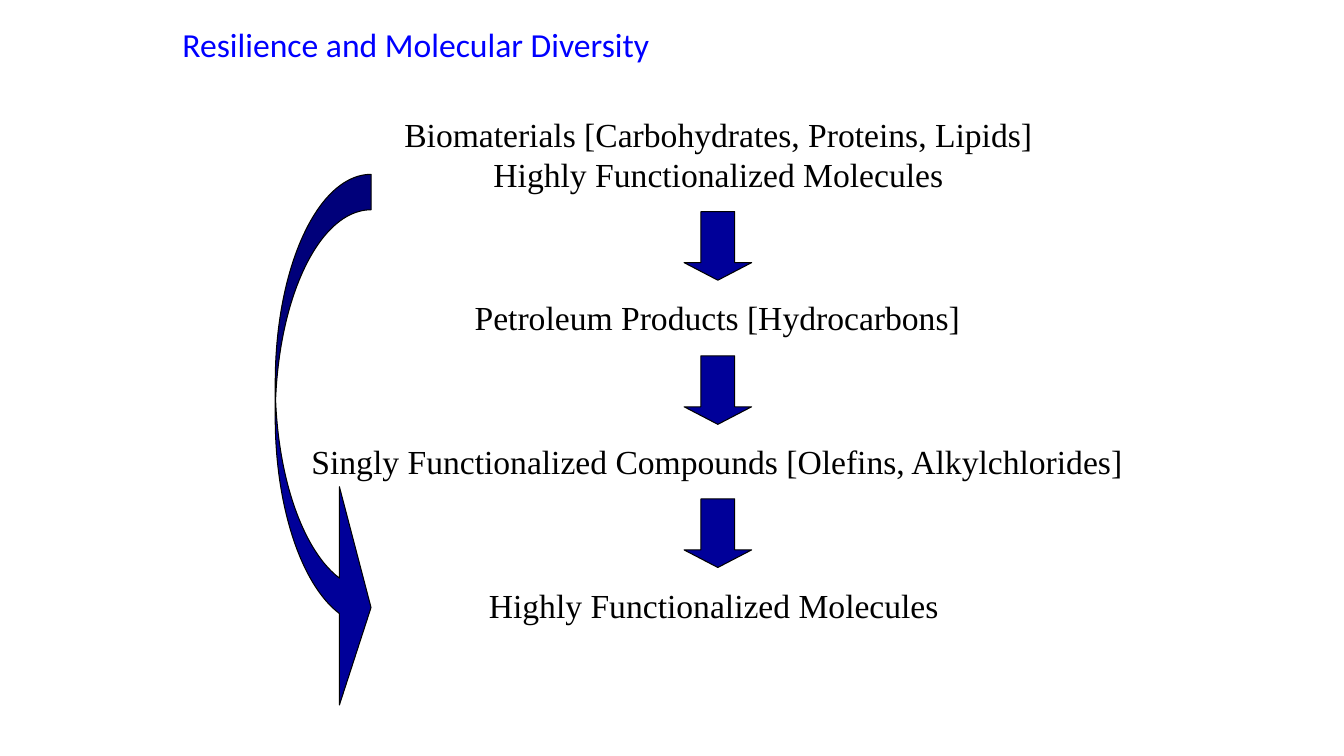
import pptx
import pptx.util
import pptx.dml.color
import pptx.enum.shapes
import pptx.enum.text

Inches, Pt = pptx.util.Inches, pptx.util.Pt
SHAPE = pptx.enum.shapes.MSO_SHAPE
ALIGN = pptx.enum.text.PP_ALIGN
ANCHOR = pptx.enum.text.MSO_ANCHOR

TITLE = "Resilience and Molecular Diversity"
# Lines, alignment, and box (left, top, width, height) of each stage
STAGES = [
    (["Biomaterials [Carbohydrates, Proteins, Lipids]",
      "Highly Functionalized Molecules"], ALIGN.CENTER, (3.88, 1.08, 6.49, 0.91)),
    (["Petroleum Products [Hydrocarbons]"], ALIGN.LEFT, (4.61, 2.9, 5.1, 0.5)),
    (["Singly Functionalized Compounds [Olefins, Alkylchlorides]"], ALIGN.LEFT,
     (2.99, 4.33, 8.35, 0.5)),
    (["Highly Functionalized Molecules"], ALIGN.LEFT, (4.75, 5.75, 4.74, 0.5)),
]
COLORS = {"title": "0000FF", "text": "000000", "arrow": "000099", "outline": "000000"}
CENTER = 7.12
ARROW_W, ARROW_H, ARROW_GAP = 0.67, 0.68, 0.12


def rgb(name):
    return pptx.dml.color.RGBColor.from_string(COLORS[name])


def add_run(p, text, font, color):
    r = p.add_run()
    r.text = text
    r.font.name = font
    r.font.size = Pt(24)
    r.font.color.rgb = rgb(color)


def add_arrow(s, kind, box, adjustments):
    sp = s.shapes.add_shape(kind, *map(Inches, box))
    sp.shadow.inherit = False
    for i, value in enumerate(adjustments):
        sp.adjustments[i] = value
    sp.fill.solid()
    sp.fill.fore_color.rgb = rgb("arrow")
    sp.line.color.rgb = rgb("outline")
    sp.line.width = Pt(0.75)


def add_stage(s, lines, alignment, box):
    sp = s.shapes.add_textbox(*map(Inches, box))
    tf = sp.text_frame
    tf.word_wrap = False
    for i, line in enumerate(lines):
        p = tf.add_paragraph() if i else tf.paragraphs[0]
        p.alignment = alignment
        add_run(p, line, "Times New Roman", "text")


def add_title(s):
    sp = s.shapes.title
    sp.left, sp.top, sp.width, sp.height = map(Inches, (1.71, 0.17, 10, 0.59))
    tf = sp.text_frame
    tf.word_wrap = True
    tf.vertical_anchor = ANCHOR.MIDDLE
    p = tf.paragraphs[0]
    p.alignment = ALIGN.LEFT
    p.line_spacing = 0.9
    add_run(p, TITLE, "Calibri", "title")


def main():
    prs = pptx.Presentation()
    prs.slide_width, prs.slide_height = Inches(13.33), Inches(7.5)
    s = prs.slides.add_slide(prs.slide_layouts[5])
    add_title(s)
    for i, (lines, alignment, box) in enumerate(STAGES):
        add_stage(s, lines, alignment, box)
        if i:
            arrow_top = box[1] - ARROW_GAP - ARROW_H
            add_arrow(s, SHAPE.DOWN_ARROW,
                      (CENTER - ARROW_W / 2, arrow_top, ARROW_W, ARROW_H), (0.5, 0.26))
    add_arrow(s, SHAPE.CURVED_RIGHT_ARROW, (2.73, 1.73, 0.95, 5.38), (0.37, 2.28, 0.33))
    prs.save("out.pptx")


if __name__ == "__main__":
    main()
